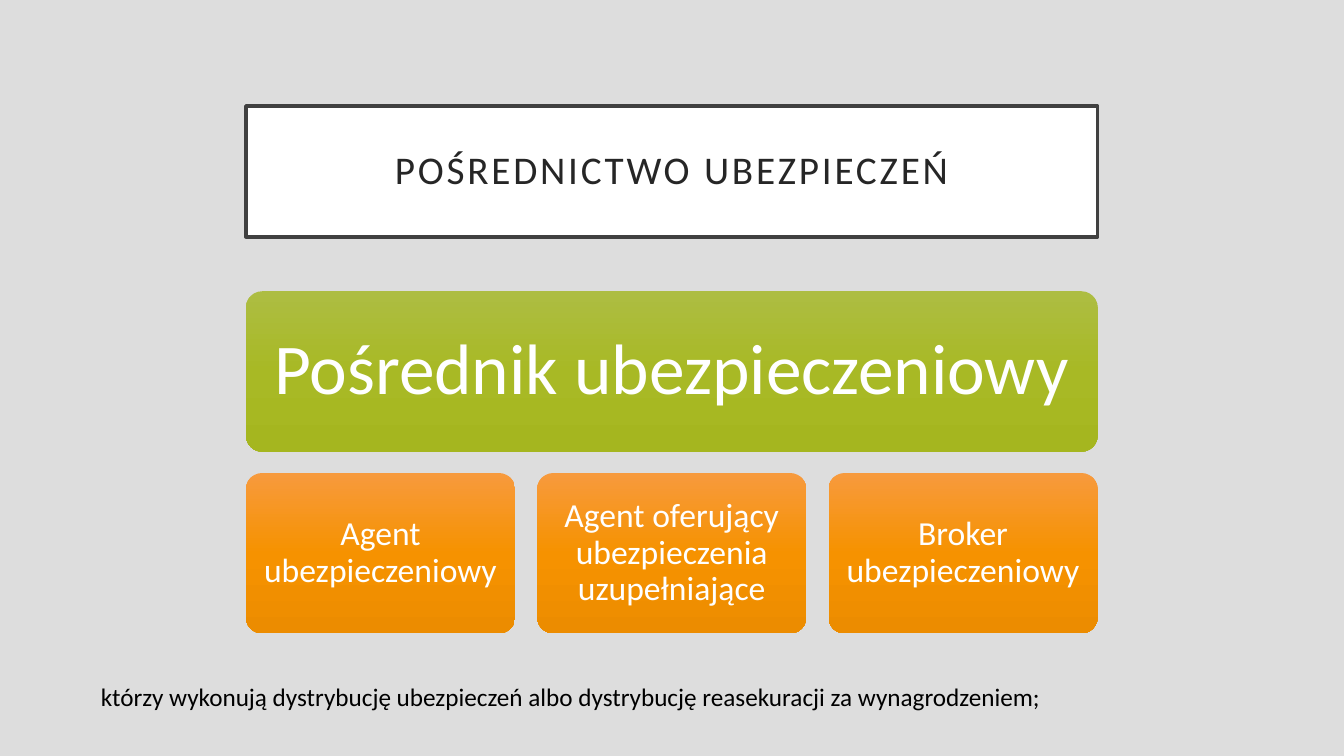
from lxml import etree
from pptx import Presentation
from pptx.dml.color import RGBColor
from pptx.enum.shapes import MSO_SHAPE
from pptx.enum.text import MSO_ANCHOR, PP_ALIGN
from pptx.oxml.ns import qn
from pptx.util import Cm, Pt

COLORS = {
    "background": "DDDDDD", "white": "FFFFFF", "frame": "404040",
    "title": "262626", "note": "000000",
}
GREEN = ["ADBD42", "A8B925", "A5B61F"]
ORANGE = ["F79A3D", "F69200", "EC8C00"]


class SlideBuilder:
    font = "Calibri"

    def __init__(self, slide):
        self.slide = slide

    def color(self, name):
        return RGBColor.from_string(COLORS[name])

    def background(self, name):
        fill = self.slide.background.fill
        fill.solid()
        fill.fore_color.rgb = self.color(name)

    def add_text(self, frame, text, size, color, inset, align=PP_ALIGN.CENTER):
        frame.word_wrap = True
        frame.vertical_anchor = MSO_ANCHOR.MIDDLE
        frame.margin_left = frame.margin_right = Cm(inset)
        frame.margin_top = frame.margin_bottom = Cm(inset)
        paragraph = frame.paragraphs[0]
        paragraph.alignment = align
        paragraph.line_spacing = 0.9
        run = paragraph.add_run()
        run.text = text
        run.font.name = self.font
        run.font.size = Pt(size)
        run.font.color.rgb = self.color(color)
        return run

    def block(self, kind, left, top, width, height):
        block = self.slide.shapes.add_shape(
            kind, Cm(left), Cm(top), Cm(width), Cm(height))
        block.shadow.inherit = False
        return block

    def title(self, text, left, top, width, height):
        box = self.block(MSO_SHAPE.RECTANGLE, left, top, width, height)
        box.fill.solid()
        box.fill.fore_color.rgb = self.color("white")
        box.line.color.rgb = self.color("frame")
        box.line.width = Pt(2.5)
        run = self.add_text(box.text_frame, text, 28, "title", 0.51)
        run.font._element.set("spc", "200")

    def card(self, text, left, top, width, height, shades, size, inset):
        card = self.block(MSO_SHAPE.ROUNDED_RECTANGLE, left, top, width, height)
        card.adjustments[0] = 0.1
        card.line.fill.background()
        card.fill.gradient()
        card.fill.gradient_angle = 270
        # Three evenly spaced shades from top to bottom
        stops = card._element.spPr.find(qn("a:gradFill")).find(qn("a:gsLst"))
        for stop in list(stops):
            stops.remove(stop)
        for i, shade in enumerate(shades):
            stop = etree.SubElement(stops, qn("a:gs"), pos=str(i * 50000))
            etree.SubElement(stop, qn("a:srgbClr"), val=shade)
        self.add_text(card.text_frame, text, size, "white", inset)

    def note(self, text, left, top, width, height):
        note = self.slide.shapes.add_textbox(
            Cm(left), Cm(top), Cm(width), Cm(height))
        self.add_text(note.text_frame, text, 18, "note", 0.25, PP_ALIGN.LEFT)
        note.text_frame.paragraphs[0].line_spacing = 1.0
        note.text_frame.margin_top = note.text_frame.margin_bottom = Cm(0.13)


def main():
    deck = Presentation()
    deck.slide_width, deck.slide_height = Cm(33.87), Cm(19.05)
    builder = SlideBuilder(deck.slides.add_slide(deck.slide_layouts[6]))
    builder.background("background")

    left, width, card_height, gap = 6.2, 21.46, 4.04, 0.56

    # Title
    builder.title("POŚREDNICTWO UBEZPIECZEŃ", left, 2.67, width, 3.3)

    # Hierarchy: the intermediary above its three kinds
    builder.card("Pośrednik ubezpieczeniowy", left, 7.34, width, card_height,
                 GREEN, 51, 0.53)
    kinds = ["Agent ubezpieczeniowy",
             "Agent oferujący ubezpieczenia uzupełniające",
             "Broker ubezpieczeniowy"]
    kind_width = (width - gap * (len(kinds) - 1)) / len(kinds)
    for i, kind in enumerate(kinds):
        builder.card(kind, left + i * (kind_width + gap), 11.92, kind_width,
                     card_height, ORANGE, 24, 0.25)

    # Closing note
    builder.note("którzy wykonują dystrybucję ubezpieczeń albo dystrybucję "
                 "reasekuracji za wynagrodzeniem;", 2.29, 17.04, 29.26, 1.02)

    deck.save("out.pptx")


if __name__ == "__main__":
    main()
